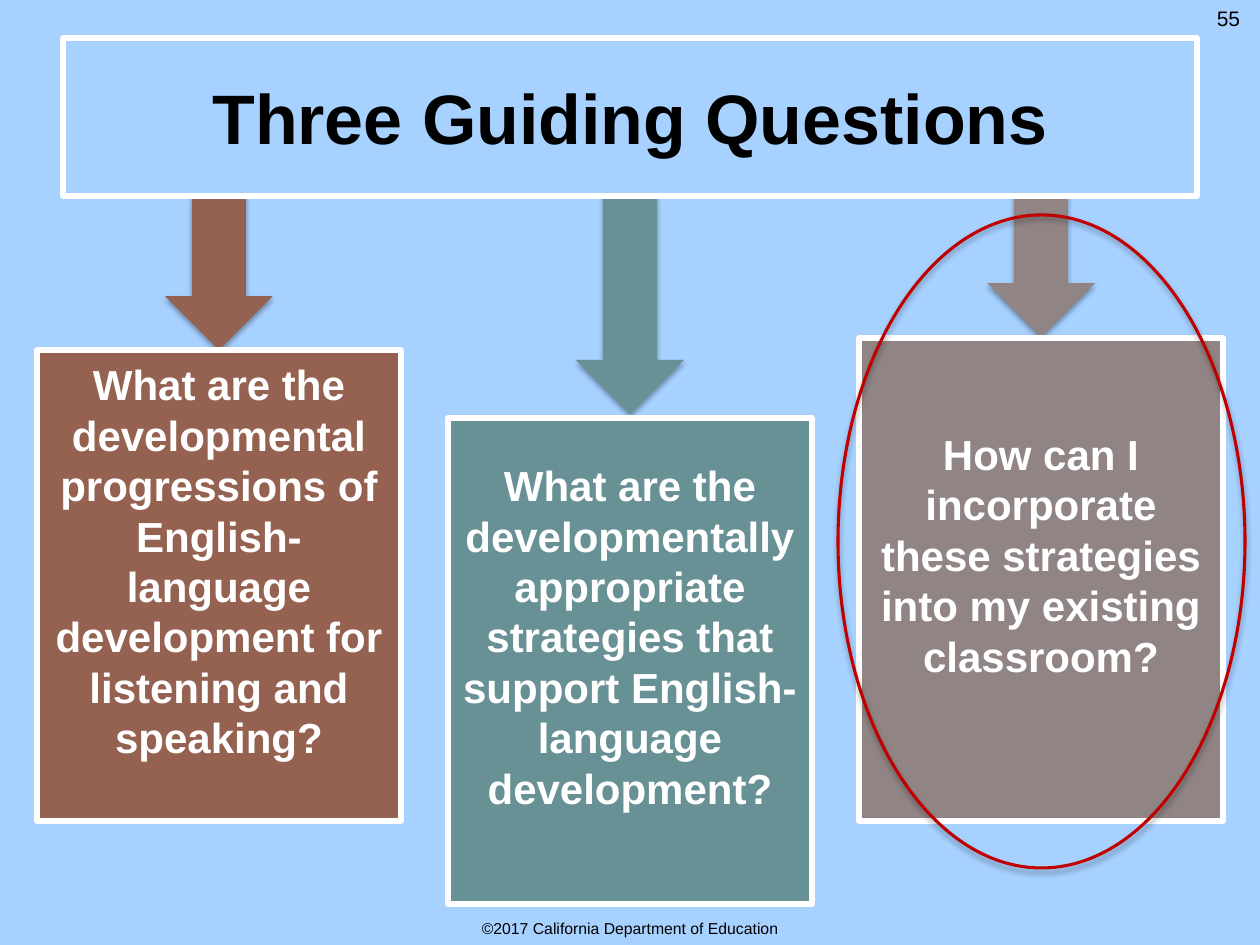
from lxml import etree
from pptx import Presentation
from pptx.dml.color import RGBColor
from pptx.enum.shapes import MSO_SHAPE
from pptx.enum.text import MSO_ANCHOR, PP_ALIGN
from pptx.oxml.ns import qn
from pptx.util import Emu, Pt

RECTANGLE = MSO_SHAPE.RECTANGLE
DOWN_ARROW = MSO_SHAPE.DOWN_ARROW
RING = MSO_SHAPE.FLOWCHART_CONNECTOR
CENTER = PP_ALIGN.CENTER
TOP, MIDDLE = MSO_ANCHOR.TOP, MSO_ANCHOR.MIDDLE

EMU_PER_PX = 914400 / 126
SLIDE_W, SLIDE_H = 1260, 945
TITLE_ONLY = 5
COLORS = {
    "background": "A7D1FF",
    "black": "000000",
    "white": "FFFFFF",
    "brown": "956251",
    "teal": "689195",
    "taupe": "918485",
    "red": "C00000",
}

TITLE_BOX = (63, 38, 1134, 158)
ARROW_TOP, ARROW_W = 195, 108
CARD_LEFT, CARD_W, CARD_PITCH = 37, 364, 411
# question, colour, card top, card height, arrow length
QUESTIONS = [
    ("What are the developmental progressions of English-language "
     "development for listening and speaking?", "brown", 350, 471, 155),
    ("What are the developmentally appropriate strategies that support "
     "English-language development?", "teal", 418, 486, 219),
    ("How can I incorporate these strategies into my existing classroom?",
     "taupe", 338, 483, 142),
]


def px(length):
    return Emu(round(length * EMU_PER_PX))


def rgb(name):
    return RGBColor.from_string(COLORS[name])


def write(shape, text, *, size, color="black", bold=False, anchor=MIDDLE,
          line_pitch=None, bottom=6):
    frame = shape.text_frame
    frame.word_wrap = True
    frame.vertical_anchor = anchor
    frame.margin_left = frame.margin_right = px(12)
    frame.margin_top, frame.margin_bottom = px(6), px(bottom)
    paragraph = frame.paragraphs[0]
    paragraph.alignment = CENTER
    if line_pitch:
        paragraph.line_spacing = Pt(line_pitch)
    run = paragraph.add_run()
    run.text = text
    run.font.name, run.font.size, run.font.bold = "Arial", Pt(size), bold
    run.font.color.rgb = rgb(color)


def style(shape, fill=None, line=None, line_width=3):
    if fill:
        shape.fill.solid()
        shape.fill.fore_color.rgb = rgb(fill)
    else:
        shape.fill.background()
    if line:
        shape.line.color.rgb = rgb(line)
        shape.line.width = Pt(line_width)
    else:
        shape.line.fill.background()


def add_figure(slide, kind, box, **look):
    figure = slide.shapes.add_shape(kind, *map(px, box))
    figure.shadow.inherit = False
    style(figure, **look)
    return figure


def add_soft_shadow(shape):
    effects = shape._element.spPr.find(qn("a:effectLst"))
    shadow = etree.SubElement(effects, qn("a:outerShdw"), blurRad=str(Pt(3.1)),
                              dist=str(Pt(1.8)), dir="5400000", rotWithShape="0")
    shade = etree.SubElement(shadow, qn("a:srgbClr"), val=COLORS["black"])
    etree.SubElement(shade, qn("a:alpha"), val="35000")


def add_label(slide, box, text, **text_format):
    write(slide.shapes.add_textbox(*map(px, box)), text, **text_format)


def place_title(slide, box, text):
    """Frame the title and bring it in front of the arrow tails."""
    title = slide.shapes.title
    title.left, title.top, title.width, title.height = map(px, box)
    style(title, line="white")
    write(title, text, size=40, bold=True)
    slide.shapes._spTree.append(title._element)


def add_arrow(slide, center, top, length, color):
    box = (center - ARROW_W // 2, top, ARROW_W, length)
    add_soft_shadow(add_figure(slide, DOWN_ARROW, box, fill=color))


def add_card(slide, box, question, color):
    card = add_figure(slide, RECTANGLE, box, fill=color, line="white")
    write(card, question, size=24, color="white", bold=True,
          line_pitch=28.8, bottom=56)


def add_highlight(slide, box):
    ring = add_figure(slide, RING, box, line="red", line_width=1.75)
    add_soft_shadow(ring)


def build_slide(deck):
    slide = deck.slides.add_slide(deck.slide_layouts[TITLE_ONLY])
    slide.background.fill.solid()
    slide.background.fill.fore_color.rgb = rgb("background")

    add_label(slide, (0, 912, SLIDE_W, 32),
              "©2017 California Department of Education", size=9)
    lefts = [CARD_LEFT + i * CARD_PITCH for i in range(len(QUESTIONS))]
    for left, (_, color, _, _, arrow_length) in zip(lefts, QUESTIONS):
        add_arrow(slide, left + CARD_W // 2, ARROW_TOP, arrow_length, color)
    place_title(slide, TITLE_BOX, "Three Guiding Questions")
    for left, (question, color, top, height, _) in zip(lefts, QUESTIONS):
        add_card(slide, (left, top, CARD_W, height), question, color)
    add_label(slide, (1197, 0, 63, 50), "55", size=12, anchor=TOP)
    add_highlight(slide, (838, 215, 407, 653))


def main():
    deck = Presentation()
    deck.slide_width, deck.slide_height = px(SLIDE_W), px(SLIDE_H)
    build_slide(deck)
    deck.save("out.pptx")


if __name__ == "__main__":
    main()
